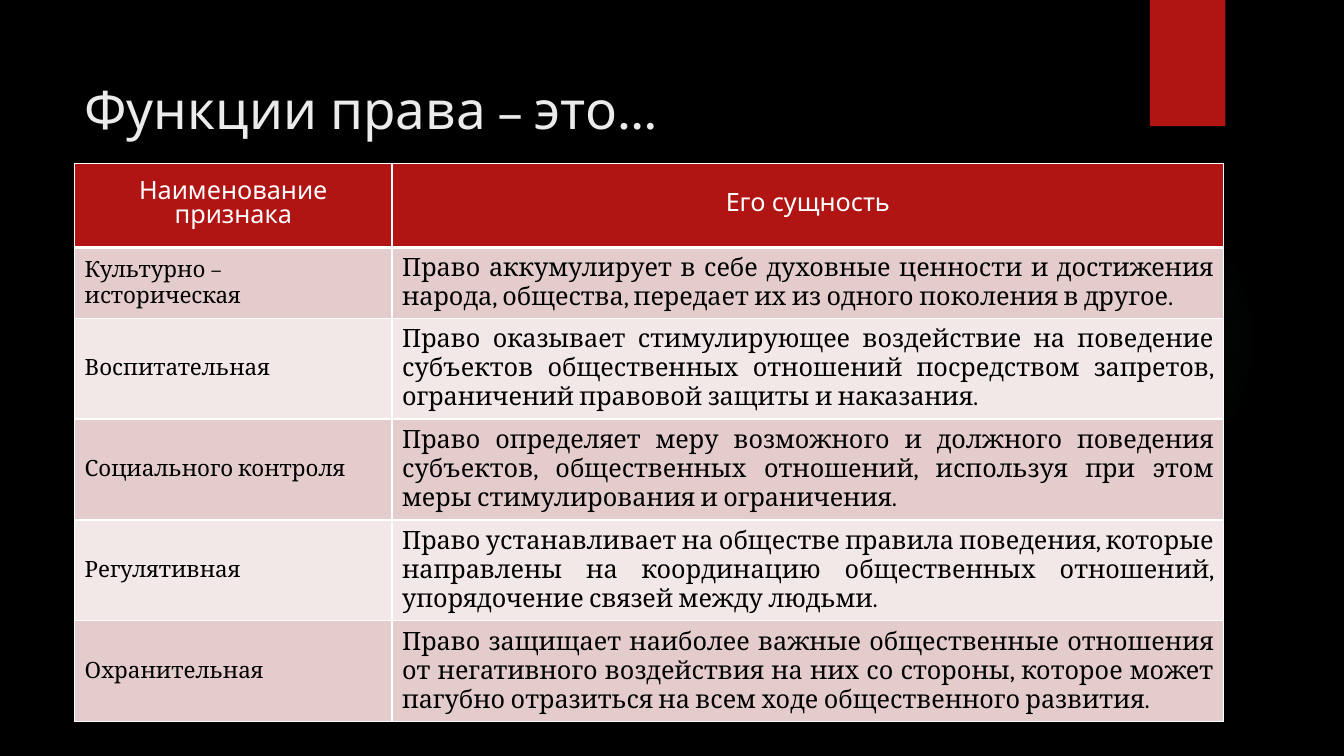
from dataclasses import dataclass

import pptx
import pptx.dml.color
import pptx.enum.shapes
import pptx.enum.text
import pptx.oxml
import pptx.oxml.ns
import pptx.util

Cm = pptx.util.Cm
Pt = pptx.util.Pt
ALIGN = pptx.enum.text.PP_ALIGN
MIDDLE = pptx.enum.text.MSO_ANCHOR.MIDDLE
SHAPE = pptx.enum.shapes.MSO_SHAPE

COLORS = {
    "background": "000000",
    "glow": "50B9C1",
    "accent": "B01513",
    "title": "EBEBEB",
    "light": "FFFFFF",
    "dark": "000000",
    "odd_row": "E4CCCC",
    "even_row": "F2E8E7",
}
HEADING_FONT = "League Spartan"
BODY_FONT = "Cambria"
LEFT = 1.88
COLUMN_WIDTHS = (8.0, 20.96)
HEADER_HEIGHT = 2.13
GLOW_STOPS = ((0, 7), (36, 6), (69, 0))  # position and opacity, percent


@dataclass
class LegalFunction:
    name: str
    essence: str
    height: float = 2.44


@dataclass
class CellStyle:
    font: str
    size: float
    color: str
    fill: str
    align: ALIGN
    bottom_border: float = 1


HEADERS = ("Наименование признака", "Его сущность")
FUNCTIONS = (
    LegalFunction(
        "Культурно – историческая",
        "Право аккумулирует в себе духовные ценности и достижения народа, "
        "общества, передает их из одного поколения в другое.",
        1.73,
    ),
    LegalFunction(
        "Воспитательная",
        "Право оказывает стимулирующее воздействие на поведение субъектов "
        "общественных отношений посредством запретов, ограничений правовой "
        "защиты и наказания.",
    ),
    LegalFunction(
        "Социального контроля",
        "Право определяет меру возможного и должного поведения субъектов, "
        "общественных отношений, используя при этом меры стимулирования и "
        "ограничения.",
    ),
    LegalFunction(
        "Регулятивная",
        "Право устанавливает на обществе правила поведения, которые "
        "направлены на координацию общественных отношений, упорядочение "
        "связей между людьми.",
    ),
    LegalFunction(
        "Охранительная",
        "Право защищает наиболее важные общественные отношения от "
        "негативного воздействия на них со стороны, которое может пагубно "
        "отразиться на всем ходе общественного развития.",
    ),
)


def rgb(name: str) -> pptx.dml.color.RGBColor:
    return pptx.dml.color.RGBColor.from_string(COLORS[name])


def set_font(para, name: str, size: float, color: str) -> None:
    para.font.name = name
    para.font.size = Pt(size)
    para.font.color.rgb = rgb(color)


def add_plain_shape(page, kind: SHAPE, left: float, top: float,
                    width: float, height: float):
    shape = page.shapes.add_shape(kind, Cm(left), Cm(top), Cm(width), Cm(height))
    shape.shadow.inherit = False
    shape.line.fill.background()
    return shape


def add_glow(page) -> None:
    """Add a circle that fades out from its centre."""
    glow = add_plain_shape(page, SHAPE.OVAL, 23.9, 4.65, 7.82, 7.82)
    stops = "".join(
        f'<a:gs pos="{position * 1000}"><a:srgbClr val="{COLORS["glow"]}">'
        f'<a:alpha val="{opacity * 1000}"/></a:srgbClr></a:gs>'
        for position, opacity in GLOW_STOPS
    )
    gradient = pptx.oxml.parse_xml(
        f'<a:gradFill {pptx.oxml.ns.nsdecls("a")}><a:gsLst>{stops}</a:gsLst>'
        '<a:path path="circle"><a:fillToRect l="50000" t="50000" r="50000" '
        'b="50000"/></a:path></a:gradFill>'
    )
    geometry = glow.element.spPr.find(pptx.oxml.ns.qn("a:prstGeom"))
    geometry.addnext(gradient)


def add_title(page, text: str) -> None:
    box = page.shapes.add_textbox(Cm(LEFT), Cm(1.7), Cm(17), Cm(2.06))
    frame = box.text_frame
    frame.word_wrap = True
    frame.vertical_anchor = MIDDLE
    frame.text = text
    set_font(frame.paragraphs[0], HEADING_FONT, 37.8, "title")


def set_borders(cell, bottom: float) -> None:
    properties = cell._tc.get_or_add_tcPr()
    for side, width in (("L", 1), ("R", 1), ("T", 1), ("B", bottom)):
        properties.append(pptx.oxml.parse_xml(
            f'<a:ln{side} {pptx.oxml.ns.nsdecls("a")} w="{Pt(width)}">'
            f'<a:solidFill><a:srgbClr val="{COLORS["light"]}"/></a:solidFill>'
            f'</a:ln{side}>'
        ))


def fill_cell(cell, text: str, style: CellStyle) -> None:
    set_borders(cell, style.bottom_border)
    cell.fill.solid()
    cell.fill.fore_color.rgb = rgb(style.fill)
    cell.vertical_anchor = MIDDLE
    cell.text = text
    para = cell.text_frame.paragraphs[0]
    para.alignment = style.align
    set_font(para, style.font, style.size, style.color)


def add_functions_table(page) -> None:
    heights = [HEADER_HEIGHT] + [function.height for function in FUNCTIONS]
    table = page.shapes.add_table(
        len(heights), len(COLUMN_WIDTHS), Cm(LEFT), Cm(4.11),
        Cm(sum(COLUMN_WIDTHS)), Cm(sum(heights)),
    ).table
    table.first_row = table.horz_banding = False
    for column, width in zip(table.columns, COLUMN_WIDTHS):
        column.width = Cm(width)
    for row, height in zip(table.rows, heights):
        row.height = Cm(height)

    header = CellStyle(HEADING_FONT, 18, "light", "accent", ALIGN.CENTER, 3)
    for column, text in enumerate(HEADERS):
        fill_cell(table.cell(0, column), text, header)
    for row, function in enumerate(FUNCTIONS, start=1):
        fill = "odd_row" if row % 2 else "even_row"
        fill_cell(table.cell(row, 0), function.name,
                  CellStyle(BODY_FONT, 16, "dark", fill, ALIGN.LEFT))
        fill_cell(table.cell(row, 1), function.essence,
                  CellStyle(BODY_FONT, 18, "dark", fill, ALIGN.JUSTIFY))


def main() -> None:
    deck = pptx.Presentation()
    deck.slide_width, deck.slide_height = Cm(33.87), Cm(19.05)
    page = deck.slides.add_slide(deck.slide_layouts[6])
    page.background.fill.solid()
    page.background.fill.fore_color.rgb = rgb("background")

    add_glow(page)
    ribbon = add_plain_shape(page, SHAPE.RECTANGLE, 28.98, 0, 1.9, 3.18)
    ribbon.fill.solid()
    ribbon.fill.fore_color.rgb = rgb("accent")
    add_title(page, "Функции права – это…")
    add_functions_table(page)
    deck.save("out.pptx")


if __name__ == "__main__":
    main()
